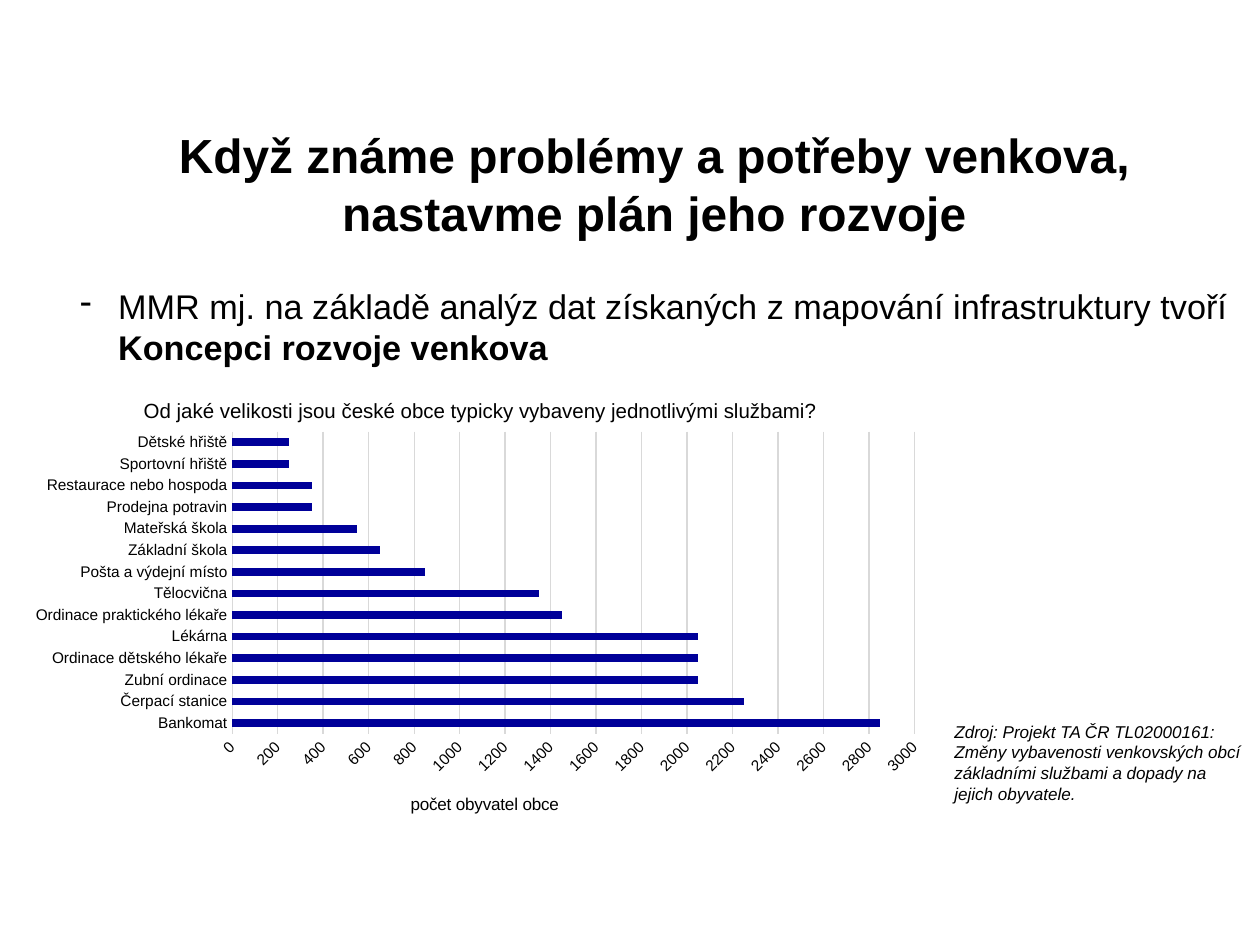
from dataclasses import dataclass, field
from typing import Any

import lxml.etree
import pptx
import pptx.chart.data
import pptx.dml.color
import pptx.enum.chart
import pptx.enum.text
import pptx.oxml.ns
import pptx.util

PX = 914400 / 123
ALIGN = pptx.enum.text.PP_ALIGN
BLACK, GREY, NAVY = "000000", "D9D9D9", "000099"


@dataclass
class Run:
    text: str
    form: dict[str, Any]


@dataclass
class Para:
    runs: list[Run]
    form: dict[str, Any] = field(default_factory=dict)
    hang: int = 0


@dataclass
class Box:
    left: int
    top: int
    width: int
    height: int
    paras: list[Para] = field(default_factory=list)


HEAD = {"size": pptx.util.Pt(28), "bold": True}
BODY = {"size": pptx.util.Pt(20), "bold": False}
NOTE = {"size": pptx.util.Pt(10), "italic": True}

BOXES = [
    Box(68, 120, 1172, 249, [
        Para([Run("Když známe problémy a potřeby venkova, nastavme plán jeho rozvoje", HEAD)],
             {"alignment": ALIGN.CENTER}),
        Para([Run("MMR mj. na základě analýz dat získaných z mapování infrastruktury tvoří ", BODY),
              Run("Koncepci rozvoje venkova", BODY | {"bold": True})],
             {"alignment": ALIGN.JUSTIFY, "space_before": pptx.util.Pt(26)}, 38),
    ]),
    Box(942, 715, 317, 95, [
        Para([Run("Zdroj: Projekt TA ČR TL02000161:", NOTE)]),
        Para([Run("Změny vybavenosti venkovských obcí základními službami "
                  "a dopady na jejich obyvatele.", NOTE)]),
    ]),
]
PLOT = Box(20, 371, 922, 465)
TOWNS = {
    "Bankomat": 2850,
    "Čerpací stanice": 2250,
    "Zubní ordinace": 2050,
    "Ordinace dětského lékaře": 2050,
    "Lékárna": 2050,
    "Ordinace praktického lékaře": 1450,
    "Tělocvična": 1350,
    "Pošta a výdejní místo": 850,
    "Základní škola": 650,
    "Mateřská škola": 550,
    "Prodejna potravin": 350,
    "Restaurace nebo hospoda": 350,
    "Sportovní hřiště": 250,
    "Dětské hřiště": 250,
}


def emu(px: int) -> int:
    return round(px * PX)


def place(box: Box) -> list[int]:
    return [emu(px) for px in (box.left, box.top, box.width, box.height)]


def color(text: str) -> pptx.dml.color.RGBColor:
    return pptx.dml.color.RGBColor.from_string(text)


def style(item: Any, form: dict[str, Any]) -> None:
    for name, value in form.items():
        setattr(item, name, value)


def ink(font: Any, form: dict[str, Any]) -> None:
    style(font, {"name": "Arial"} | form)
    font.color.rgb = color(BLACK)


def dash(para: Any, hang: int) -> None:
    """Give the paragraph a dash bullet with a hanging indent."""
    props = para._p.get_or_add_pPr()
    props.set("marL", str(emu(hang)))
    props.set("indent", str(-emu(hang)))
    mark = lxml.etree.SubElement(props, pptx.oxml.ns.qn("a:buChar"))
    mark.set("char", "-")


def write(slide: Any, box: Box) -> None:
    frame = slide.shapes.add_textbox(*place(box)).text_frame
    frame.word_wrap = True
    for index, part in enumerate(box.paras):
        para = frame.add_paragraph() if index else frame.paragraphs[0]
        if part.hang:
            dash(para, part.hang)
        style(para, part.form)
        for piece in part.runs:
            run = para.add_run()
            run.text = piece.text
            ink(run.font, piece.form)


def label(title: Any, text: str, size: int) -> None:
    para = title.text_frame.paragraphs[0]
    run = para.add_run()
    run.text = text
    ink(run.font, {"size": pptx.util.Pt(size), "bold": False})


def pin(item: Any, index: int, spots: dict[str, Any]) -> None:
    """Fix a chart part at fractions of the chart's size."""
    tag = pptx.oxml.ns.qn
    for old in item.findall(tag("c:layout")):
        item.remove(old)
    layout = lxml.etree.Element(tag("c:layout"))
    item.insert(index, layout)
    manual = lxml.etree.SubElement(layout, tag("c:manualLayout"))
    for name, value in spots.items():
        lxml.etree.SubElement(manual, tag("c:" + name)).set("val", str(value))


def rule(line: Any) -> None:
    line.color.rgb = color(GREY)
    line.width = pptx.util.Pt(0.75)


def graph(slide: Any, box: Box) -> None:
    kinds = pptx.enum.chart
    data = pptx.chart.data.CategoryChartData()
    data.categories = list(TOWNS)
    data.add_series("Series 1", list(TOWNS.values()))
    chart = slide.shapes.add_chart(
        kinds.XL_CHART_TYPE.BAR_CLUSTERED, *place(box), data).chart
    ink(chart.font, {"size": pptx.util.Pt(10)})
    chart.has_legend = False

    plot = chart.plots[0]
    style(plot, {"gap_width": 182, "vary_by_categories": False})
    fill = plot.series[0].format.fill
    fill.solid()
    fill.fore_color.rgb = color(NAVY)

    cats, vals = chart.category_axis, chart.value_axis
    for axis in (cats, vals):
        style(axis, {"major_tick_mark": kinds.XL_TICK_MARK.NONE,
                     "minor_tick_mark": kinds.XL_TICK_MARK.NONE})
        ink(axis.tick_labels.font, {"size": pptx.util.Pt(9)})
    style(vals, {"minimum_scale": 0, "maximum_scale": 3000, "major_unit": 200,
                 "has_major_gridlines": True})
    rule(cats.format.line)
    rule(vals.major_gridlines.format.line)
    vals.format.line.fill.background()
    turn = vals._element.find(pptx.oxml.ns.qn("c:txPr")).find(pptx.oxml.ns.qn("a:bodyPr"))
    turn.set("rot", str(-45 * 60000))

    label(chart.chart_title,
          "Od jaké velikosti jsou české obce typicky vybaveny jednotlivými službami?", 12)
    label(vals.axis_title, "počet obyvatel obce", 10)
    free = {"xMode": "edge", "yMode": "edge"}
    pin(chart.chart_title._element, 1, free | {"x": 0.13, "y": 0.05})
    pin(vals.axis_title._element, 1, free | {"x": 0.42, "y": 0.9})
    pin(chart._chartSpace.chart.plotArea, 0,
        {"layoutTarget": "inner"} | free | {"x": 0.23, "y": 0.13, "w": 0.74, "h": 0.65})


def main() -> None:
    deck = pptx.Presentation()
    deck.slide_width = pptx.util.Inches(10.24)
    deck.slide_height = pptx.util.Inches(7.68)
    slide = deck.slides.add_slide(deck.slide_layouts[6])
    graph(slide, PLOT)
    for box in BOXES:
        write(slide, box)
    deck.save("out.pptx")


if __name__ == "__main__":
    main()
